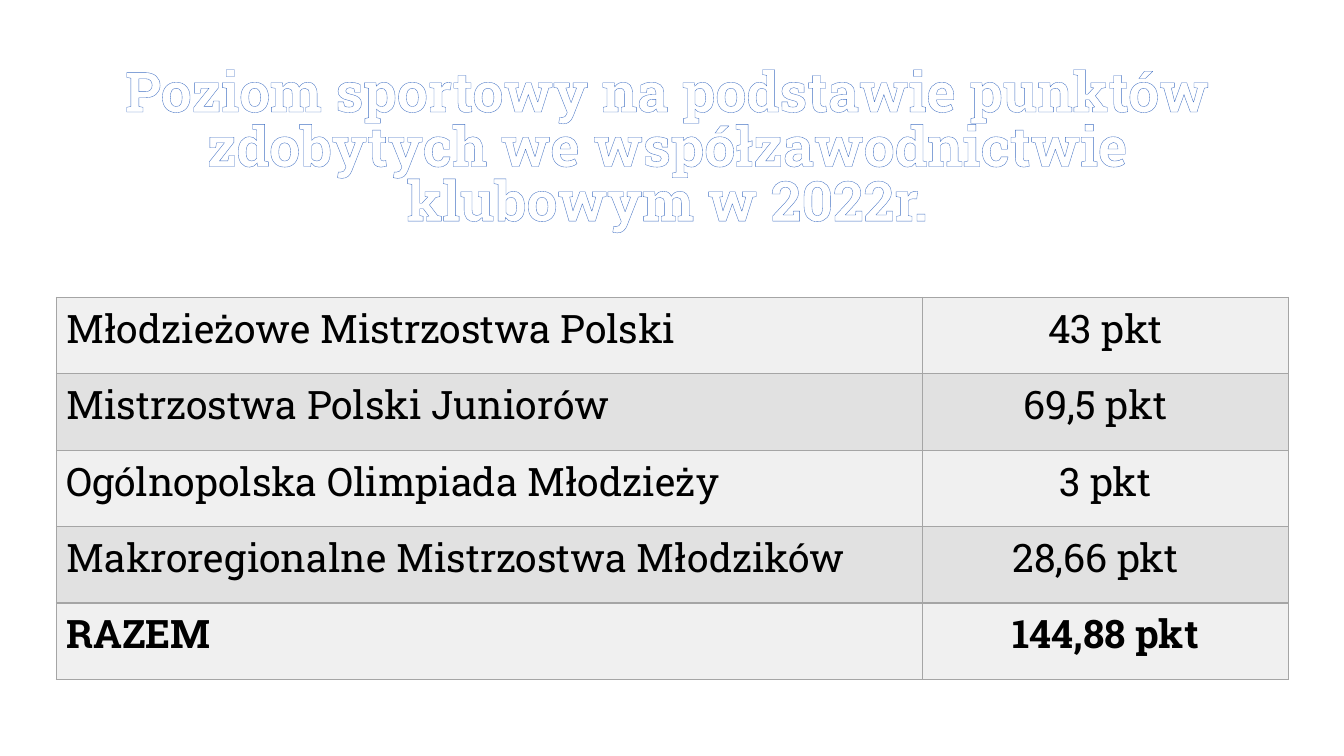
from lxml.etree import SubElement
from pptx import Presentation
from pptx.dml.color import RGBColor
from pptx.enum.text import MSO_ANCHOR, MSO_AUTO_SIZE, PP_ALIGN
from pptx.oxml import parse_xml
from pptx.oxml.ns import nsdecls, qn
from pptx.util import Inches, Pt

WHITE = RGBColor(0xFF, 0xFF, 0xFF)
BLACK = RGBColor(0x00, 0x00, 0x00)
BLUE = RGBColor(0x44, 0x72, 0xC4)
GRAY = RGBColor(0xA5, 0xA5, 0xA5)
BANDS = (RGBColor(0xF0, 0xF0, 0xF0), RGBColor(0xE1, 0xE1, 0xE1))
FONT = "Roboto Slab"

TITLE = ("Poziom sportowy na podstawie punktów zdobytych "
         "we współzawodnictwie klubowym w 2022r.")
# Competition, points, right inset of the points cell
RESULTS = [
    ("Młodzieżowe Mistrzostwa Polski", "43 pkt", 0.1),
    ("Mistrzostwa Polski Juniorów", "69,5 pkt", 0.3),
    ("Ogólnopolska Olimpiada Młodzieży", "3 pkt", 0.1),
    ("Makroregionalne Mistrzostwa Młodzików", "28,66 pkt", 0.3),
    ("RAZEM", "144,88 pkt", 0.1),
]


def format_font(font, color, **values):
    font.name = FONT
    font.color.rgb = color
    for name, value in values.items():
        setattr(font, name, value)


def add_title(slide, left, top, width, height):
    sp = slide.shapes.title
    box = {"left": left, "top": top, "width": width, "height": height}
    for name, value in box.items():
        setattr(sp, name, Inches(value))
    tf = sp.text_frame
    frame = {"word_wrap": True, "auto_size": MSO_AUTO_SIZE.NONE,
             "vertical_anchor": MSO_ANCHOR.MIDDLE,
             "margin_top": 0, "margin_bottom": 0}
    for name, value in frame.items():
        setattr(tf, name, value)
    p = tf.paragraphs[0]
    p.alignment = PP_ALIGN.CENTER
    p.line_spacing = 0.82
    r = p.add_run()
    r.text = TITLE
    format_font(r.font, WHITE, size=Pt(39.6), bold=True)
    outline = parse_xml(
        f'<a:ln {nsdecls("a")} w="{Pt(0.8)}"><a:solidFill>'
        f'<a:srgbClr val="{BLUE}"/></a:solidFill></a:ln>')
    r.font._element.insert(0, outline)


def set_borders(cell):
    """Draw all four edges; they must precede the fill in the cell properties."""
    tcPr = cell._tc.get_or_add_tcPr()
    for edge in ("lnL", "lnR", "lnT", "lnB"):
        ln = SubElement(tcPr, qn(f"a:{edge}"), w=str(Pt(1)))
        fill = SubElement(ln, qn("a:solidFill"))
        SubElement(fill, qn("a:srgbClr"), val=str(GRAY))


def add_results(slide, left, top, width, height):
    table = slide.shapes.add_table(
        len(RESULTS), 2, Inches(left), Inches(top),
        Inches(width), Inches(height)).table
    points_width = 3.63
    table.columns[0].width = Inches(width - points_width)
    table.columns[1].width = Inches(points_width)
    for i, (competition, points, inset) in enumerate(RESULTS):
        is_total = i == len(RESULTS) - 1
        for j, text in enumerate((competition, points)):
            cell = table.cell(i, j)
            set_borders(cell)
            cell.fill.solid()
            cell.fill.fore_color.rgb = BANDS[i % 2]
            p = cell.text_frame.paragraphs[0]
            r = p.add_run()
            r.text = text
            format_font(r.font, BLACK, size=Pt(28), bold=is_total)
            if j == 1:
                p.alignment = PP_ALIGN.CENTER
                cell.margin_right = Inches(inset)


def main():
    prs = Presentation()
    prs.slide_width = Inches(13.33)
    prs.slide_height = Inches(7.5)
    slide = prs.slides.add_slide(prs.slide_layouts[5])
    add_title(slide, 0.7, 0.59, 11.84, 1.8)
    add_results(slide, 0.56, 2.95, 12.22, 3.79)
    prs.save("out.pptx")


if __name__ == "__main__":
    main()
